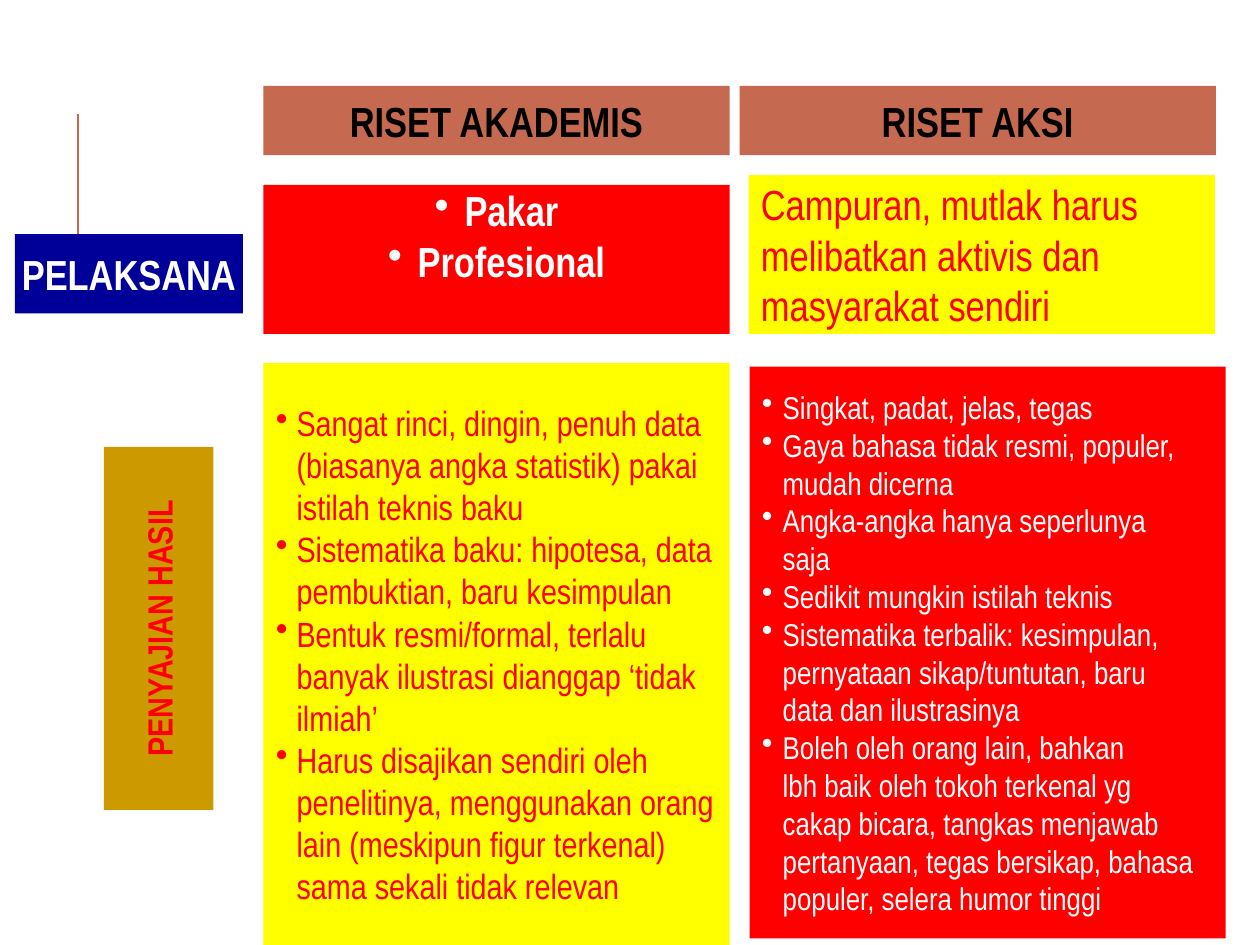
from dataclasses import dataclass

from lxml.etree import SubElement
from pptx import Presentation
from pptx.dml.color import RGBColor
from pptx.enum.shapes import MSO_CONNECTOR, MSO_SHAPE
from pptx.enum.text import MSO_ANCHOR, PP_ALIGN
from pptx.oxml.ns import qn
from pptx.util import Cm, Pt

RUST, RED, YELLOW = "C66951", "FF0000", "FFFF00"
NAVY, GOLD, BLACK, WHITE = "000099", "CC9900", "000000", "FFFFFF"
MARK = "•"


@dataclass
class Box:
    left: float
    top: float
    width: float
    height: float
    fill: str
    color: str
    lines: list[str]
    size: int = 24
    bold: bool = False
    center: bool = False
    turn: int = 0
    hang: float = 0  # width kept for bullets, in cm
    high: bool = False  # text starts at the top edge


PAKAR = ["•Pakar", "•Profesional"]
AKTIVIS = ["Campuran, mutlak harus", "melibatkan aktivis dan", "masyarakat sendiri"]
FORMAL = [
    "•Sangat rinci, dingin, penuh data",
    "(biasanya angka statistik) pakai",
    "istilah teknis baku",
    "•Sistematika baku: hipotesa, data",
    "pembuktian, baru kesimpulan",
    "•Bentuk resmi/formal, terlalu",
    "banyak ilustrasi dianggap ‘tidak",
    "ilmiah’",
    "•Harus disajikan sendiri oleh",
    "penelitinya, menggunakan orang",
    "lain (meskipun figur terkenal)",
    "sama sekali tidak relevan",
]
POPULAR = [
    "•Singkat, padat, jelas, tegas",
    "•Gaya bahasa tidak resmi, populer,",
    "mudah dicerna",
    "•Angka-angka hanya seperlunya",
    "saja",
    "•Sedikit mungkin istilah teknis",
    "•Sistematika terbalik: kesimpulan,",
    "pernyataan sikap/tuntutan, baru",
    "data dan ilustrasinya",
    "•Boleh oleh orang lain, bahkan",
    "lbh baik oleh tokoh terkenal yg",
    "cakap bicara, tangkas menjawab",
    "pertanyaan, tegas bersikap, bahasa",
    "populer, selera humor tinggi",
]

MID, WIDE = 5.31, 9.4
BOXES = [
    Box(MID, 1.73, WIDE, 1.4, RUST, BLACK, ["RISET AKADEMIS"], bold=True, center=True),
    Box(14.91, 1.73, 9.6, 1.4, RUST, BLACK, ["RISET AKSI"], bold=True, center=True),
    Box(0.3, 4.72, 4.6, 1.6, NAVY, WHITE, ["PELAKSANA"], bold=True, center=True),
    Box(MID, 3.73, WIDE, 3, RED, WHITE, PAKAR,
        bold=True, center=True, hang=0.6, high=True),
    Box(15.09, 3.53, WIDE, 3.2, YELLOW, RED, AKTIVIS),
    Box(-0.46, 11.56, 7.32, 2.21, GOLD, RED, ["PENYAJIAN HASIL"],
        size=20, bold=True, center=True, turn=270),
    Box(MID, 7.32, WIDE, 11.73, YELLOW, RED, FORMAL, size=20, hang=0.42),
    Box(15.11, 7.39, 9.6, 11.53, RED, WHITE, POPULAR, size=18, hang=0.42),
]


def tint(code: str) -> RGBColor:
    return RGBColor.from_string(code)


def indent(para, hang: float, marked: bool) -> None:
    """Indent a line by the bullet width, with a hanging bullet if marked."""
    props = para._p.get_or_add_pPr()
    props.set("marL", str(Cm(hang)))
    props.set("indent", str(-Cm(hang) if marked else 0))
    if marked:
        SubElement(props, qn("a:buChar")).set("char", MARK)


def draw_box(slide, box: Box) -> None:
    shape = slide.shapes.add_shape(
        MSO_SHAPE.RECTANGLE,
        Cm(box.left), Cm(box.top), Cm(box.width), Cm(box.height))
    shape.shadow.inherit = False
    shape.rotation = box.turn
    shape.fill.solid()
    shape.fill.fore_color.rgb = tint(box.fill)
    shape.line.fill.background()
    frame = shape.text_frame
    frame.word_wrap = False
    frame.vertical_anchor = MSO_ANCHOR.TOP if box.high else MSO_ANCHOR.MIDDLE
    if box.high:
        frame.margin_top = 0
    for i, line in enumerate(box.lines):
        para = frame.add_paragraph() if i else frame.paragraphs[0]
        if box.hang:
            indent(para, box.hang, line.startswith(MARK))
        para.text = line.removeprefix(MARK)
        para.alignment = PP_ALIGN.CENTER if box.center else PP_ALIGN.LEFT
        font = para.font
        font.name, font.size, font.bold = "Arial Narrow", Pt(box.size), box.bold
        font.color.rgb = tint(box.color)


def draw_line(slide, x: float, start: float, end: float) -> None:
    line = slide.shapes.add_connector(
        MSO_CONNECTOR.STRAIGHT, Cm(x), Cm(start), Cm(x), Cm(end))
    line.line.color.rgb = tint(RUST)
    line.line.width = Pt(1.5)
    SubElement(line._element.spPr, qn("a:effectLst"))


def main() -> None:
    deck = Presentation()
    deck.slide_width, deck.slide_height = Cm(25.4), Cm(19.05)
    slide = deck.slides.add_slide(deck.slide_layouts[6])
    draw_line(slide, 1.57, 4.83, 2.29)
    for box in BOXES:
        draw_box(slide, box)
    deck.save("out.pptx")


if __name__ == "__main__":
    main()
